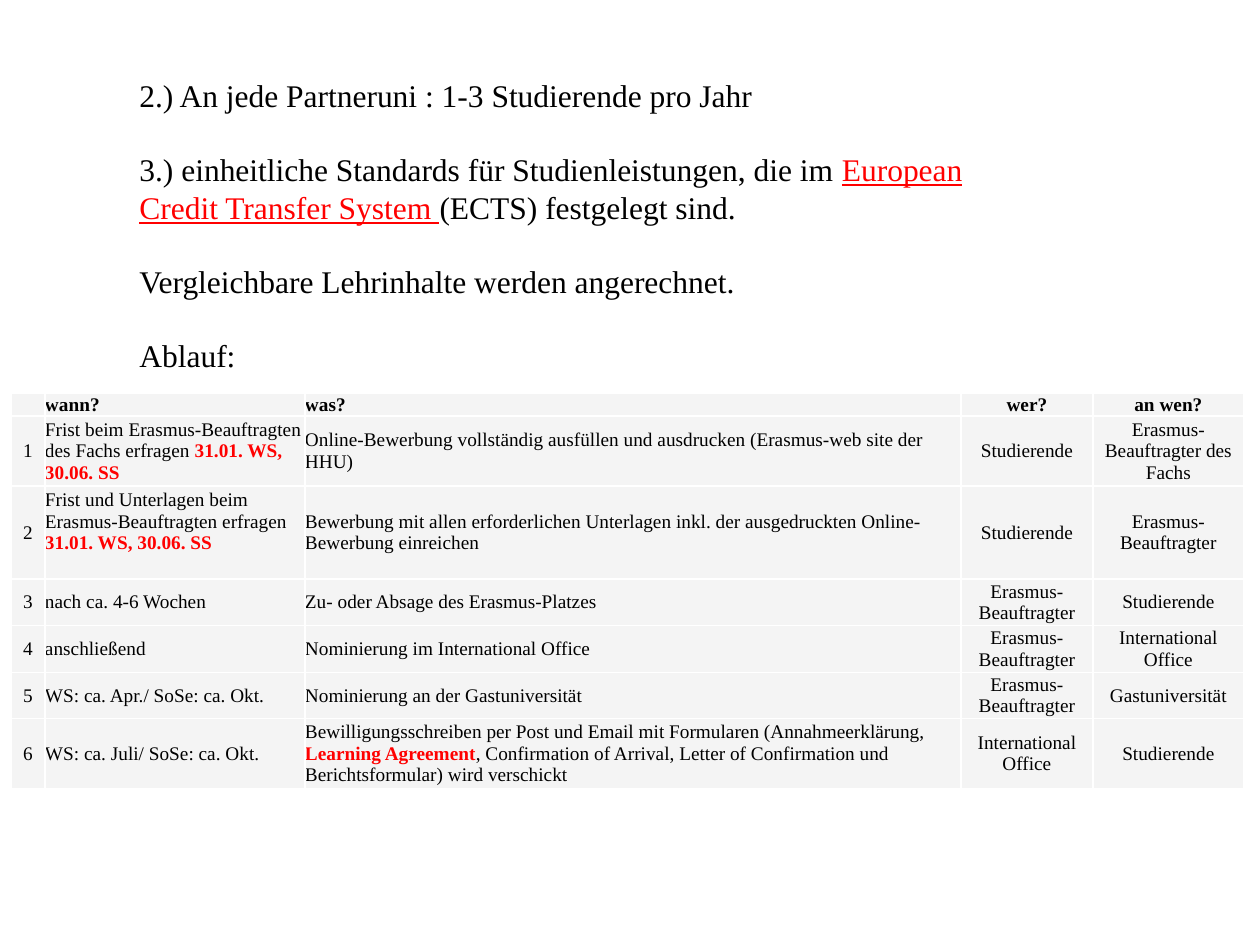
import pptx
import pptx.util
import pptx.dml.color
import pptx.enum.text
import pptx.oxml
import pptx.oxml.ns

PX = 914400 / 126
FONT = "Times New Roman"
BLACK = pptx.dml.color.RGBColor(0, 0, 0)
RED = pptx.dml.color.RGBColor(255, 0, 0)
GREY = pptx.dml.color.RGBColor(0xF4, 0xF4, 0xF4)
WHITE = pptx.dml.color.RGBColor(255, 255, 255)

POINTS = [
    "2.) An jede Partneruni : 1-3 Studierende pro Jahr",
    "3.) einheitliche Standards für Studienleistungen, die im "
    "|European Credit Transfer System |(ECTS) festgelegt sind.",
    "Vergleichbare Lehrinhalte werden angerechnet.",
    "Ablauf:",
]
HEAD = ["", "wann?", "was?", "wer?", "an wen?"]
STEPS = [
    ["Frist beim Erasmus-Beauftragten des Fachs erfragen |31.01. WS, 30.06. SS",
     "Online-Bewerbung vollständig ausfüllen und ausdrucken (Erasmus-web site der HHU)",
     "Studierende", "Erasmus-Beauftragter des Fachs"],
    ["Frist und Unterlagen beim Erasmus-Beauftragten erfragen |31.01. WS, 30.06. SS",
     "Bewerbung mit allen erforderlichen Unterlagen inkl. der ausgedruckten "
     "Online-Bewerbung einreichen",
     "Studierende", "Erasmus-Beauftragter"],
    ["nach ca. 4-6 Wochen", "Zu- oder Absage des Erasmus-Platzes",
     "Erasmus-Beauftragter", "Studierende"],
    ["anschließend", "Nominierung im International Office",
     "Erasmus-Beauftragter", "International Office"],
    ["WS: ca. Apr./ SoSe: ca. Okt.", "Nominierung an der Gastuniversität",
     "Erasmus-Beauftragter", "Gastuniversität"],
    ["WS: ca. Juli/ SoSe: ca. Okt.",
     "Bewilligungsschreiben per Post und Email mit Formularen (Annahmeerklärung, "
     "|Learning Agreement|, Confirmation of Arrival, Letter of Confirmation und "
     "Berichtsformular) wird verschickt",
     "International Office", "Studierende"],
]
COLS = [34, 260, 656, 132, 151]
ROWS = [22, 70, 93, 46, 47, 46, 70]


def emu(px):
    """Turn px into EMU."""
    return pptx.util.Emu(round(px * PX))


def write(para, text, size, bold=False, mark="bold"):
    """Fill a paragraph, with every second part between bars in red."""
    for i, part in enumerate(text.split("|")):
        if not part:
            continue
        run = para.add_run()
        run.text = part
        font = run.font
        font.name, font.size, font.bold = FONT, pptx.util.Pt(size), bold
        font.color.rgb = RED if i % 2 else BLACK
        if i % 2:
            setattr(font, mark, True)


def edge(cell):
    """Draw thin white borders round a cell."""
    props = cell._tc.get_or_add_tcPr()
    for side in "LRTB":
        props.append(pptx.oxml.parse_xml(
            f'<a:ln{side} {pptx.oxml.ns.nsdecls("a")} w="12700"><a:solidFill>'
            f'<a:srgbClr val="{WHITE}"/></a:solidFill></a:ln{side}>'))


def intro(slide, x, y, w, h):
    """Place the list of points in its box."""
    frame = slide.shapes.add_textbox(emu(x), emu(y), emu(w), emu(h)).text_frame
    frame.word_wrap = True
    for i, text in enumerate(POINTS):
        para = frame.paragraphs[0] if i == 0 else frame.add_paragraph()
        if i:
            para.space_before = pptx.util.Pt(20.7)
        write(para, text, 18, mark="underline")


def plan(slide, x, y, w, h):
    """Place the table of steps in its box."""
    data = [HEAD] + [[str(n), *step] for n, step in enumerate(STEPS, 1)]
    table = slide.shapes.add_table(
        len(ROWS), len(COLS), emu(x), emu(y), emu(w), emu(h)).table
    table.first_row = table.horz_banding = False
    for col, part in zip(table.columns, COLS):
        col.width = emu(w * part / sum(COLS))
    for row, part in zip(table.rows, ROWS):
        row.height = emu(h * part / sum(ROWS))
    for r, texts in enumerate(data):
        for c, text in enumerate(texts):
            cell = table.cell(r, c)
            cell.margin_left = cell.margin_right = 0
            cell.margin_top = cell.margin_bottom = 0
            cell.vertical_anchor = pptx.enum.text.MSO_ANCHOR.MIDDLE
            edge(cell)
            cell.fill.solid()
            cell.fill.fore_color.rgb = GREY
            para = cell.text_frame.paragraphs[0]
            if c not in (1, 2):
                para.alignment = pptx.enum.text.PP_ALIGN.CENTER
            write(para, text, 11, bold=r == 0)
            if not text:
                para._p.get_or_add_endParaRPr().set("sz", "1100")
    table.cell(2, 1).margin_bottom = emu(22)


def main():
    """Build the slide and save it."""
    deck = pptx.Presentation()
    deck.slide_width, deck.slide_height = emu(1260), emu(945)
    slide = deck.slides.add_slide(deck.slide_layouts[6])
    intro(slide, 127, 70, 912, 356)
    plan(slide, 11, 393, 1233, 394)
    deck.save("out.pptx")


if __name__ == "__main__":
    main()
